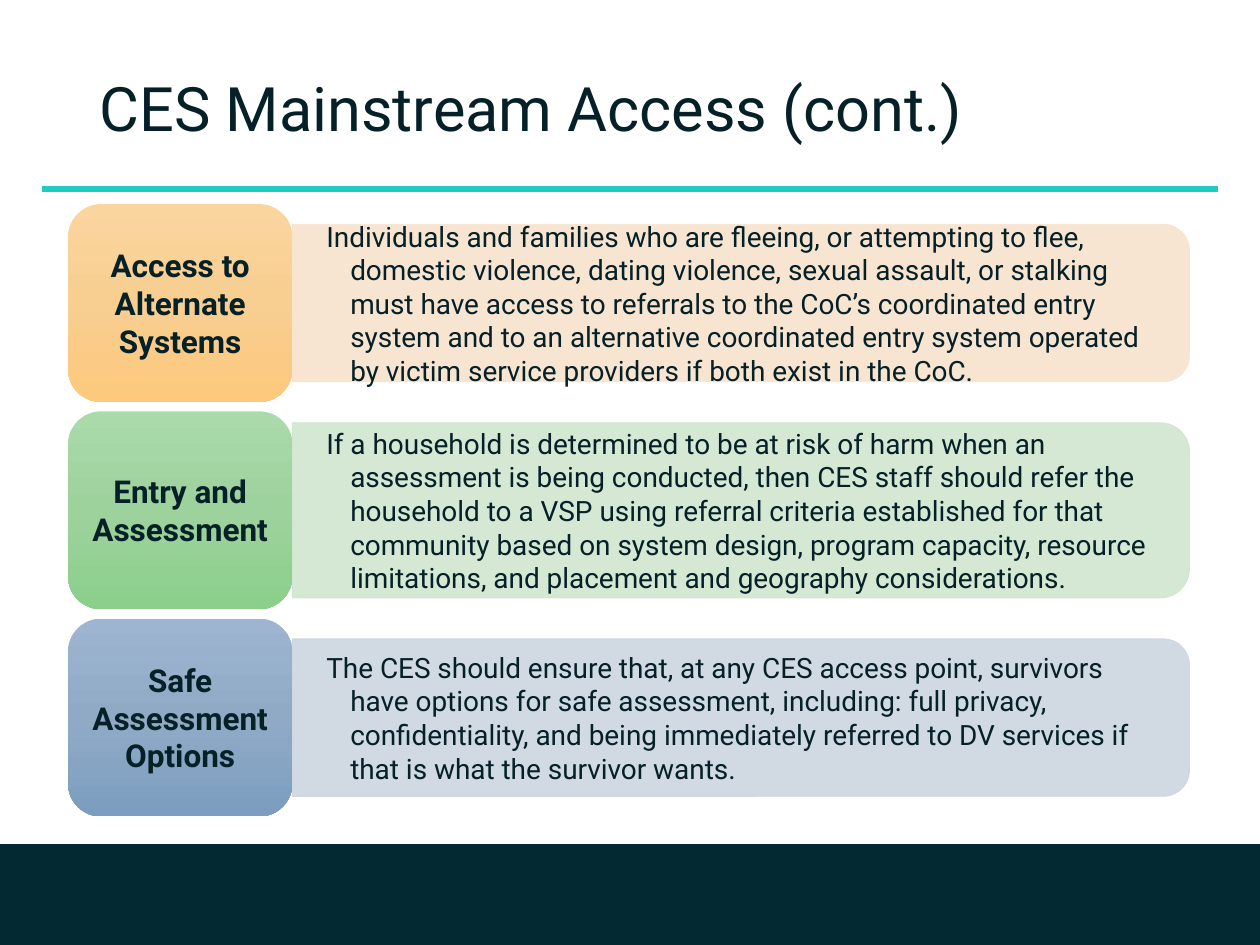
import copy
from dataclasses import dataclass

import pptx
import pptx.dml.color
import pptx.enum.shapes
import pptx.enum.text
import pptx.oxml.ns
import pptx.util
from lxml import etree

SHAPE = pptx.enum.shapes.MSO_SHAPE
ALIGN = pptx.enum.text.PP_ALIGN
ANCHOR = pptx.enum.text.MSO_ANCHOR
AUTOSIZE = pptx.enum.text.MSO_AUTO_SIZE
Pt = pptx.util.Pt
Inches = pptx.util.Inches
qn = pptx.oxml.ns.qn

SLIDE_W, SLIDE_H = 10, 7.5
FONT = "Roboto"
COLORS = {"text": "062028", "footer": "032933", "rule": "20CCC2"}

# Grid: a label column and a detail column, with one row per topic
LABEL_X, LABEL_W = 0.54, 1.78
DETAIL_X, DETAIL_W = LABEL_X + LABEL_W, 7.12
ROW_TOP, ROW_H, ROW_PITCH = 1.62, 1.57, 1.645


@dataclass
class Topic:
    label: str
    detail: str
    gradient: tuple[str, str, str]
    bar_color: str
    bar_h: float = 1.25


TOPICS = [
    Topic("Access to Alternate Systems",
          "Individuals and families who are fleeing, or attempting to flee, domestic "
          "violence, dating violence, sexual assault, or stalking must have access to "
          "referrals to the CoC’s coordinated entry system and to an alternative "
          "coordinated entry system operated by victim service providers if both exist "
          "in the CoC.",
          ("FAD59E", "F8CE91", "FDC97C"), "F8E3CC"),
    Topic("Entry and Assessment",
          "If a household is determined to be at risk of harm when an assessment is "
          "being conducted, then CES staff should refer the household to a VSP using "
          "referral criteria established for that community based on system design, "
          "program capacity, resource limitations, and placement and geography "
          "considerations.",
          ("AAD9AA", "9DD29D", "8BCF8B"), "D0E6D0", 1.39),
    Topic("Safe Assessment Options",
          "The CES should ensure that, at any CES access point, survivors have options "
          "for safe assessment, including: full privacy, confidentiality, and being "
          "immediately referred to DV services if that is what the survivor wants.",
          ("9DB5D0", "90AAC6", "7C9DBF"), "CCD5E0"),
]


def rgb(value: str) -> pptx.dml.color.RGBColor:
    return pptx.dml.color.RGBColor.from_string(value)


def add_block(s, kind, x: float, y: float, w: float, h: float):
    sp = s.shapes.add_shape(kind, Inches(x), Inches(y), Inches(w), Inches(h))
    sp.shadow.inherit = False
    sp.line.fill.background()
    return sp


def fill_solid(fill, color: str, opacity: int = 100) -> None:
    fill.solid()
    fill.fore_color.rgb = rgb(color)
    if opacity < 100:
        clr = fill._xPr.find(qn("a:solidFill"))[0]
        etree.SubElement(clr, qn("a:alpha"), val=str(opacity * 1000))


def fill_gradient(fill, colors: tuple[str, str, str]) -> None:
    """Evenly spaced stops running from top to bottom."""
    fill.gradient()
    fill.gradient_angle = 270
    stops = fill._xPr.find(qn("a:gradFill")).find(qn("a:gsLst"))
    stops.insert(1, copy.deepcopy(stops[0]))
    for i, (stop, color) in enumerate(zip(fill.gradient_stops, colors)):
        stop.color.rgb = rgb(color)
        stop.position = i / (len(colors) - 1)


def set_text(sp, text: str, size: int, align=ALIGN.LEFT, bold: bool = False,
             insets: tuple[float, float] = (0.1, 0.05)):
    tf = sp.text_frame
    tf.word_wrap = True
    tf.auto_size = AUTOSIZE.NONE
    tf.vertical_anchor = ANCHOR.MIDDLE
    tf.margin_left = tf.margin_right = Inches(insets[0])
    tf.margin_top = tf.margin_bottom = Inches(insets[1])
    tf.text = text
    p = tf.paragraphs[0]
    p.alignment = align
    p.font.name, p.font.size, p.font.bold = FONT, Pt(size), bold
    p.font.color.rgb = rgb(COLORS["text"])
    return p


def add_title(s, text: str) -> None:
    title = s.shapes.title
    title.left, title.top = Inches(0.69), Inches(0.4)
    title.width, title.height = Inches(8.62), Inches(0.97)
    set_text(title, text, 35).line_spacing = 0.9


def add_frame(s) -> None:
    """Footer band and the rule under the title."""
    footer_y = 6.7
    footer = add_block(s, SHAPE.RECTANGLE, 0, footer_y, SLIDE_W, SLIDE_H - footer_y)
    fill_solid(footer.fill, COLORS["footer"])
    margin, y = SLIDE_W / 30, SLIDE_H / 5
    rule = s.shapes.add_connector(
        pptx.enum.shapes.MSO_CONNECTOR.STRAIGHT,
        Inches(margin), Inches(y), Inches(SLIDE_W - margin), Inches(y))
    rule.line.color.rgb = rgb(COLORS["rule"])
    rule.line.width = Pt(4)
    etree.SubElement(rule._element.spPr, qn("a:effectLst"))


def add_topic(s, row: int, topic: Topic) -> None:
    top = ROW_TOP + row * ROW_PITCH
    mid_x, mid_y = DETAIL_X + DETAIL_W / 2, top + ROW_H / 2

    # A quarter turn puts the two rounded corners on the right
    bar = add_block(s, SHAPE.ROUND_2_SAME_RECTANGLE, mid_x - topic.bar_h / 2,
                    mid_y - DETAIL_W / 2, topic.bar_h, DETAIL_W)
    bar.rotation = 90
    fill_solid(bar.fill, topic.bar_color, 90)
    bar.line.width = Pt(0.5)
    fill_solid(bar.line.fill, topic.bar_color, 90)

    text_h = topic.bar_h - 0.12
    detail = s.shapes.add_textbox(Inches(DETAIL_X), Inches(mid_y - text_h / 2),
                                  Inches(DETAIL_W - 0.06), Inches(text_h))
    p = set_text(detail, topic.detail, 16, insets=(0.27, 0.14))
    pPr = p._p.get_or_add_pPr()
    pPr.set("marL", str(Inches(0.19)))
    pPr.set("indent", str(Inches(-0.19)))

    label = add_block(s, SHAPE.ROUNDED_RECTANGLE, LABEL_X, top, LABEL_W, ROW_H)
    fill_gradient(label.fill, topic.gradient)
    set_text(label, topic.label, 18, ALIGN.CENTER, True, (0.07, 0.04))


def main() -> None:
    prs = pptx.Presentation()
    prs.slide_width, prs.slide_height = Inches(SLIDE_W), Inches(SLIDE_H)
    s = prs.slides.add_slide(prs.slide_layouts[5])
    add_frame(s)
    add_title(s, "CES Mainstream Access (cont.)")
    for row, topic in enumerate(TOPICS):
        add_topic(s, row, topic)
    prs.save("out.pptx")


if __name__ == "__main__":
    main()
